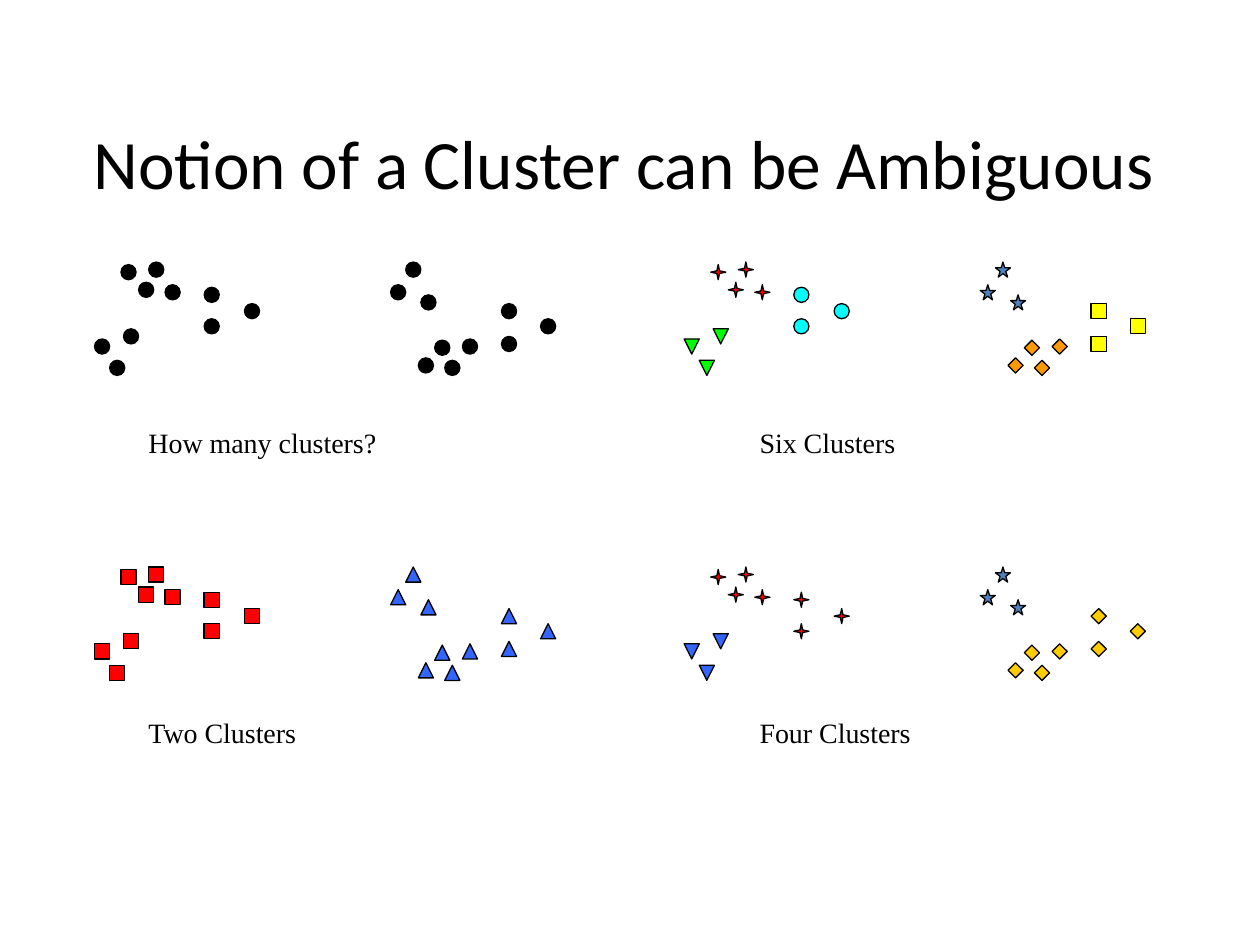
from dataclasses import dataclass
from typing import Any

import pptx
import pptx.dml.color
import pptx.enum.shapes
import pptx.enum.text
import pptx.util

Inches = pptx.util.Inches
Mark = pptx.enum.shapes.MSO_SHAPE
Anchor = pptx.enum.text.MSO_ANCHOR
Align = pptx.enum.text.PP_ALIGN
AutoSize = pptx.enum.text.MSO_AUTO_SIZE


@dataclass(frozen=True)
class Theme:
    black: str = "000000"
    red: str = "FF0000"
    green: str = "00FF00"
    cyan: str = "00FFFF"
    blue: str = "3366FF"
    steel: str = "4F81BD"
    orange: str = "FF9900"
    gold: str = "FFCC00"
    yellow: str = "FFFF00"
    title_font: str = "Calibri"
    caption_font: str = "Times New Roman"
    title_size: float = 39.6
    caption_size: float = 16
    outline_width: float = 0.75


@dataclass(frozen=True)
class Blob:
    points: tuple[tuple[float, float], ...]
    flipped: bool


@dataclass(frozen=True)
class Style:
    mark: Any
    color: str


@dataclass(frozen=True)
class Panel:
    caption: str
    column: int
    row: int
    styles: tuple[Style, ...]


THEME = Theme()
MARK_SIZE = 0.12
PANEL_LEFT, PANEL_TOP = 0.75, 2.08
PANEL_STEP_X, PANEL_STEP_Y = 4.68, 2.42
CAPTION_LEFT, CAPTION_TOP = 1.08, 3.33
CAPTION_STEP_X, CAPTION_STEP_Y = 4.85, 2.3
CAPTION_WIDTH, CAPTION_HEIGHT = 2.5, 0.37

BLOBS = (
    Blob(((2.92, 0.61), (2.57, 0.76), (2.78, 0.78), (2.7, 0.62)), False),
    Blob(((2.59, 0.26), (2.35, 0.18), (2.47, 0)), False),
    Blob(((3.23, 0.59), (3.54, 0.45), (3.23, 0.33)), False),
    Blob(((0.56, 0.18), (0.21, 0.02), (0.43, 0), (0.35, 0.16)), True),
    Blob(((0.23, 0.53), (0, 0.61), (0.12, 0.78)), True),
    Blob(((0.87, 0.2), (1.19, 0.33), (0.87, 0.45)), True),
)

BLACK_DOT = Style(Mark.OVAL, THEME.black)
CYAN_DOT = Style(Mark.OVAL, THEME.cyan)
RED_SQUARE = Style(Mark.RECTANGLE, THEME.red)
YELLOW_SQUARE = Style(Mark.RECTANGLE, THEME.yellow)
BLUE_TRIANGLE = Style(Mark.ISOSCELES_TRIANGLE, THEME.blue)
GREEN_TRIANGLE = Style(Mark.ISOSCELES_TRIANGLE, THEME.green)
BLUE_EXTRACT = Style(Mark.FLOWCHART_EXTRACT, THEME.blue)
ORANGE_DIAMOND = Style(Mark.DIAMOND, THEME.orange)
GOLD_DIAMOND = Style(Mark.DIAMOND, THEME.gold)
STEEL_STAR = Style(Mark.STAR_5_POINT, THEME.steel)
RED_STAR = Style(Mark.STAR_4_POINT, THEME.red)

PANELS = (
    Panel("How many clusters?", 0, 0, (BLACK_DOT,) * 6),
    Panel("Four Clusters", 1, 1,
          (GOLD_DIAMOND, STEEL_STAR, GOLD_DIAMOND, RED_STAR, BLUE_EXTRACT, RED_STAR)),
    Panel("Two Clusters", 0, 1, (BLUE_TRIANGLE,) * 3 + (RED_SQUARE,) * 3),
    Panel("Six Clusters", 1, 0,
          (ORANGE_DIAMOND, STEEL_STAR, YELLOW_SQUARE, RED_STAR, GREEN_TRIANGLE, CYAN_DOT)),
)


def apply_format(target: Any, values: dict[str, Any]) -> None:
    for attribute, value in values.items():
        setattr(target, attribute, value)


def rgb(color: str) -> pptx.dml.color.RGBColor:
    return pptx.dml.color.RGBColor.from_string(color)


def write_text(shape: Any, text: str, font: dict[str, Any], frame: dict[str, Any],
               alignment: Any) -> None:
    apply_format(shape.text_frame, {"text": text, **frame})
    paragraph = shape.text_frame.paragraphs[0]
    paragraph.alignment = alignment
    run = paragraph.runs[0]
    apply_format(run.font, font)
    run.font.color.rgb = rgb(THEME.black)


def draw_title(title: Any, text: str) -> None:
    apply_format(title, {"left": Inches(0.42), "top": Inches(0.98),
                         "width": Inches(9.06), "height": Inches(0.6)})
    write_text(title, text,
               {"name": THEME.title_font, "size": pptx.util.Pt(THEME.title_size)},
               {"word_wrap": True, "auto_size": AutoSize.NONE,
                "vertical_anchor": Anchor.MIDDLE},
               Align.CENTER)


def draw_mark(shapes: Any, style: Style, left: float, top: float, flipped: bool) -> None:
    point = shapes.add_shape(style.mark, Inches(left), Inches(top),
                             Inches(MARK_SIZE), Inches(MARK_SIZE))
    point.shadow.inherit = False
    point.fill.solid()
    point.fill.fore_color.rgb = rgb(style.color)
    point.line.color.rgb = rgb(THEME.black)
    point.line.width = pptx.util.Pt(THEME.outline_width)
    if flipped:
        point.element.spPr.get_or_add_xfrm().set("flipV", "1")


def draw_panel(slide: Any, panel: Panel) -> None:
    shapes = slide.shapes.add_group_shape().shapes
    left = PANEL_LEFT + panel.column * PANEL_STEP_X
    top = PANEL_TOP + panel.row * PANEL_STEP_Y
    for blob, style in zip(BLOBS, panel.styles):
        for x, y in blob.points:
            draw_mark(shapes, style, left + x, top + y, blob.flipped)
    caption = shapes.add_textbox(Inches(CAPTION_LEFT + panel.column * CAPTION_STEP_X),
                                 Inches(CAPTION_TOP + panel.row * CAPTION_STEP_Y),
                                 Inches(CAPTION_WIDTH), Inches(CAPTION_HEIGHT))
    write_text(caption, panel.caption,
               {"name": THEME.caption_font, "size": pptx.util.Pt(THEME.caption_size)},
               {"word_wrap": True, "auto_size": AutoSize.SHAPE_TO_FIT_TEXT},
               Align.LEFT)


def main() -> None:
    presentation = pptx.Presentation()
    apply_format(presentation, {"slide_width": Inches(10), "slide_height": Inches(7.5)})
    slide = presentation.slides.add_slide(presentation.slide_layouts.get_by_name("Title Only"))
    draw_title(slide.shapes.title, "Notion of a Cluster can be Ambiguous")
    for panel in PANELS:
        draw_panel(slide, panel)
    presentation.save("out.pptx")


if __name__ == "__main__":
    main()
